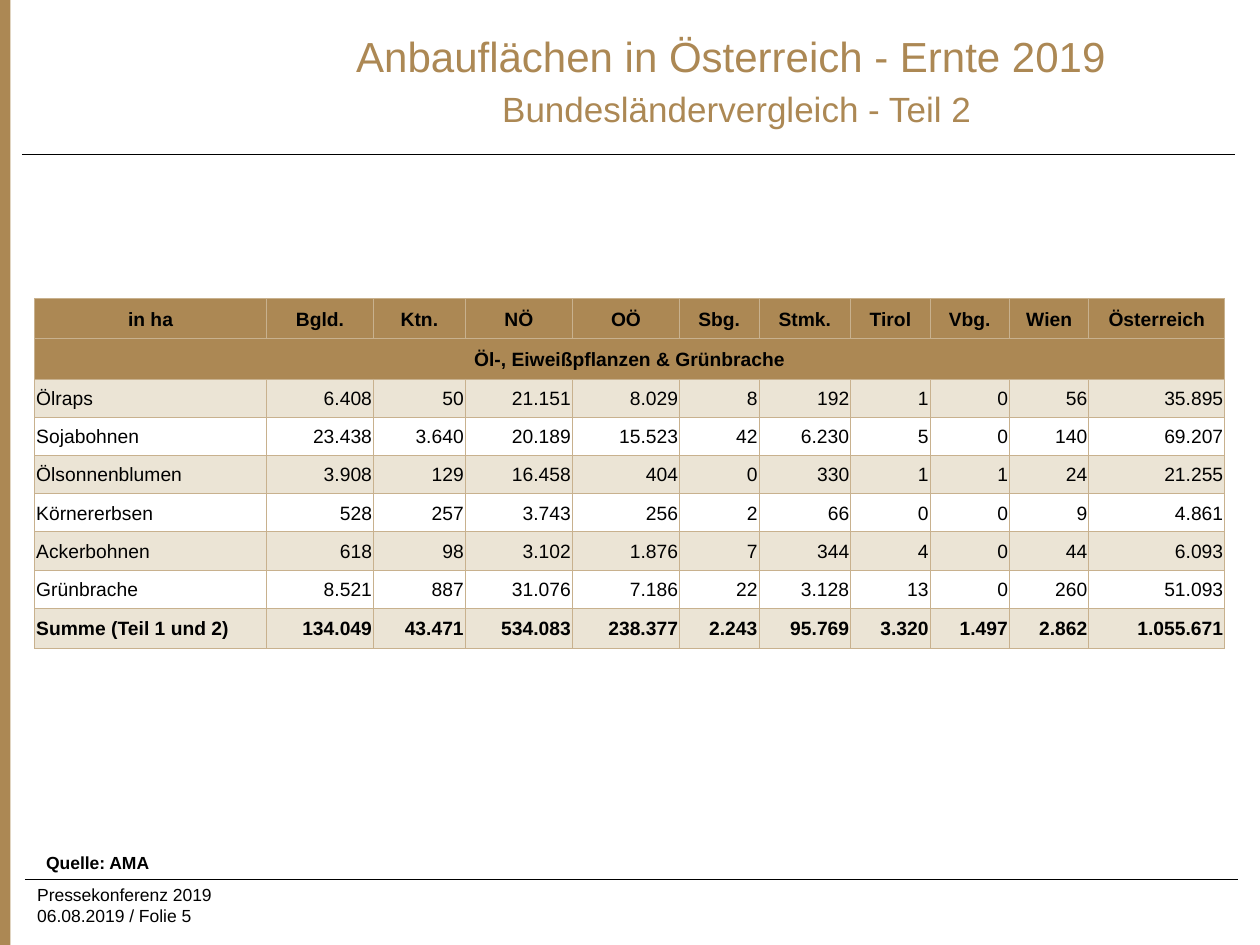
import pptx
import pptx.dml.color
import pptx.enum.shapes
import pptx.enum.text
import pptx.oxml
import pptx.oxml.ns
import pptx.util
from lxml import etree

Cm = pptx.util.Cm
Pt = pptx.util.Pt
ALIGN = pptx.enum.text.PP_ALIGN
MIDDLE = pptx.enum.text.MSO_ANCHOR.MIDDLE

BROWN, BEIGE, BORDER, BLACK = "AC8854", "EBE4D5", "C8B18E", "000000"
FONT = "Arial"

COL_WIDTHS = [4.67, 2.16, 1.85, 2.16, 2.16, 1.6, 1.85, 1.6, 1.6, 1.6, 2.74]
HEADER_HEIGHT, CROP_HEIGHT = 0.81, 0.77
HEADINGS = ["in ha", "Bgld.", "Ktn.", "NÖ", "OÖ", "Sbg.", "Stmk.", "Tirol",
            "Vbg.", "Wien", "Österreich"]
GROUP = "Öl-, Eiweißpflanzen & Grünbrache"
CROPS = [
    ["Ölraps", "6.408", "50", "21.151", "8.029", "8", "192", "1", "0", "56", "35.895"],
    ["Sojabohnen", "23.438", "3.640", "20.189", "15.523", "42", "6.230", "5", "0", "140", "69.207"],
    ["Ölsonnenblumen", "3.908", "129", "16.458", "404", "0", "330", "1", "1", "24", "21.255"],
    ["Körnererbsen", "528", "257", "3.743", "256", "2", "66", "0", "0", "9", "4.861"],
    ["Ackerbohnen", "618", "98", "3.102", "1.876", "7", "344", "4", "0", "44", "6.093"],
    ["Grünbrache", "8.521", "887", "31.076", "7.186", "22", "3.128", "13", "0", "260", "51.093"],
]
TOTAL = ["Summe (Teil 1 und 2)", "134.049", "43.471", "534.083", "238.377", "2.243",
         "95.769", "3.320", "1.497", "2.862", "1.055.671"]


def rgb(value):
    return pptx.dml.color.RGBColor.from_string(value)


def format_runs(p, size, color=BLACK, bold=False):
    for r in p.runs:
        r.font.name = FONT
        r.font.size = Pt(size)
        r.font.bold = bold
        r.font.color.rgb = rgb(color)


def add_rule(s, left, top, width):
    """Thin black horizontal line."""
    line = s.shapes.add_connector(pptx.enum.shapes.MSO_CONNECTOR.STRAIGHT,
                                  Cm(left), Cm(top), Cm(left + width), Cm(top))
    line.line.color.rgb = rgb(BLACK)
    line.line.width = Pt(0.75)
    etree.SubElement(line._element.spPr, pptx.oxml.ns.qn("a:effectLst"))


def add_text(s, left, top, width, height, text, bold=False):
    sp = s.shapes.add_textbox(Cm(left), Cm(top), Cm(width), Cm(height))
    tf = sp.text_frame
    tf.word_wrap = True
    tf.text = text
    format_runs(tf.paragraphs[0], 10, bold=bold)
    return tf


def add_side_bar(s, left, top, width, height):
    bar = s.shapes.add_shape(pptx.enum.shapes.MSO_SHAPE.RECTANGLE,
                             Cm(left), Cm(top), Cm(width), Cm(height))
    bar.shadow.inherit = False
    bar.fill.solid()
    bar.fill.fore_color.rgb = rgb(BROWN)
    bar.line.fill.background()


def fill_title(s, left, top, width, height):
    title = s.shapes.title
    title.left, title.top, title.width, title.height = map(Cm, (left, top, width, height))
    tf = title.text_frame
    tf.auto_size = pptx.enum.text.MSO_AUTO_SIZE.NONE
    tf.vertical_anchor = MIDDLE
    p = tf.paragraphs[0]
    p.text = "Anbauflächen in Österreich - Ernte 2019\v "
    p.alignment = ALIGN.CENTER
    format_runs(p, 24, BROWN)
    subtitle = p.add_run()
    subtitle.text = "Bundesländervergleich - Teil 2"
    subtitle.font.name = FONT
    subtitle.font.size = Pt(20)
    subtitle.font.color.rgb = rgb(BROWN)


def add_borders(cell):
    tc_pr = cell._tc.get_or_add_tcPr()
    for side in ("lnL", "lnR", "lnT", "lnB"):
        tc_pr.append(pptx.oxml.parse_xml(
            f'<a:{side} {pptx.oxml.ns.nsdecls("a")} w="{Pt(0.5)}"><a:solidFill>'
            f'<a:srgbClr val="{BORDER}"/></a:solidFill></a:{side}>'))


def format_cell(cell, text, align, bold, fill):
    cell.margin_left = cell.margin_right = cell.margin_top = Cm(0.03)
    cell.margin_bottom = 0
    cell.vertical_anchor = MIDDLE
    add_borders(cell)
    if fill:
        cell.fill.solid()
        cell.fill.fore_color.rgb = rgb(fill)
    else:
        cell.fill.background()
    cell.text_frame.text = text
    p = cell.text_frame.paragraphs[0]
    p.alignment = align
    format_runs(p, 11, bold=bold)


def add_area_table(s, left, top):
    group_row = [GROUP] + [""] * (len(HEADINGS) - 1)
    rows = [HEADINGS, group_row, *CROPS, TOTAL]
    heights = [HEADER_HEIGHT] * 2 + [CROP_HEIGHT] * len(CROPS) + [HEADER_HEIGHT]
    table = s.shapes.add_table(len(rows), len(HEADINGS), Cm(left), Cm(top),
                               Cm(sum(COL_WIDTHS)), Cm(sum(heights))).table
    table.first_row = table.horz_banding = False
    for column, width in zip(table.columns, COL_WIDTHS):
        column.width = Cm(width)
    for i, (values, height) in enumerate(zip(rows, heights)):
        table.rows[i].height = Cm(height)
        is_header = i < 2
        fill = BROWN if is_header else BEIGE if i % 2 == 0 else None
        for j, text in enumerate(values):
            align = ALIGN.CENTER if is_header else ALIGN.RIGHT if j else ALIGN.LEFT
            format_cell(table.cell(i, j), text, align, is_header or values is TOTAL, fill)
    table.cell(1, 0).merge(table.cell(1, len(HEADINGS) - 1))


def add_footer(s, left, top, width):
    """Source note above a rule, event and page below it."""
    tf = add_text(s, left + 0.2, top - 0.66, width - 0.46, 0.66, "Quelle: AMA", bold=True)
    tf.margin_left = tf.margin_right = Cm(0.23)
    tf.margin_top = tf.margin_bottom = Cm(0.1)
    add_rule(s, left, top, width)
    add_text(s, left, top - 0.03, 8.4, 1.02, "Pressekonferenz 2019\v06.08.2019 / Folie 5")


def main():
    prs = pptx.Presentation()
    prs.slide_width, prs.slide_height = Cm(25.4), Cm(19.05)
    s = prs.slides.add_slide(prs.slide_layouts[5])
    add_side_bar(s, -0.02, 0, 0.23, 19.05)
    fill_title(s, 4.7, 0.33, 20.07, 2.59)
    add_rule(s, 0.44, 3.12, 24.46)
    add_area_table(s, 0.7, 6.02)
    add_footer(s, 0.5, 17.73, 24.46)
    prs.save("out.pptx")


if __name__ == "__main__":
    main()
